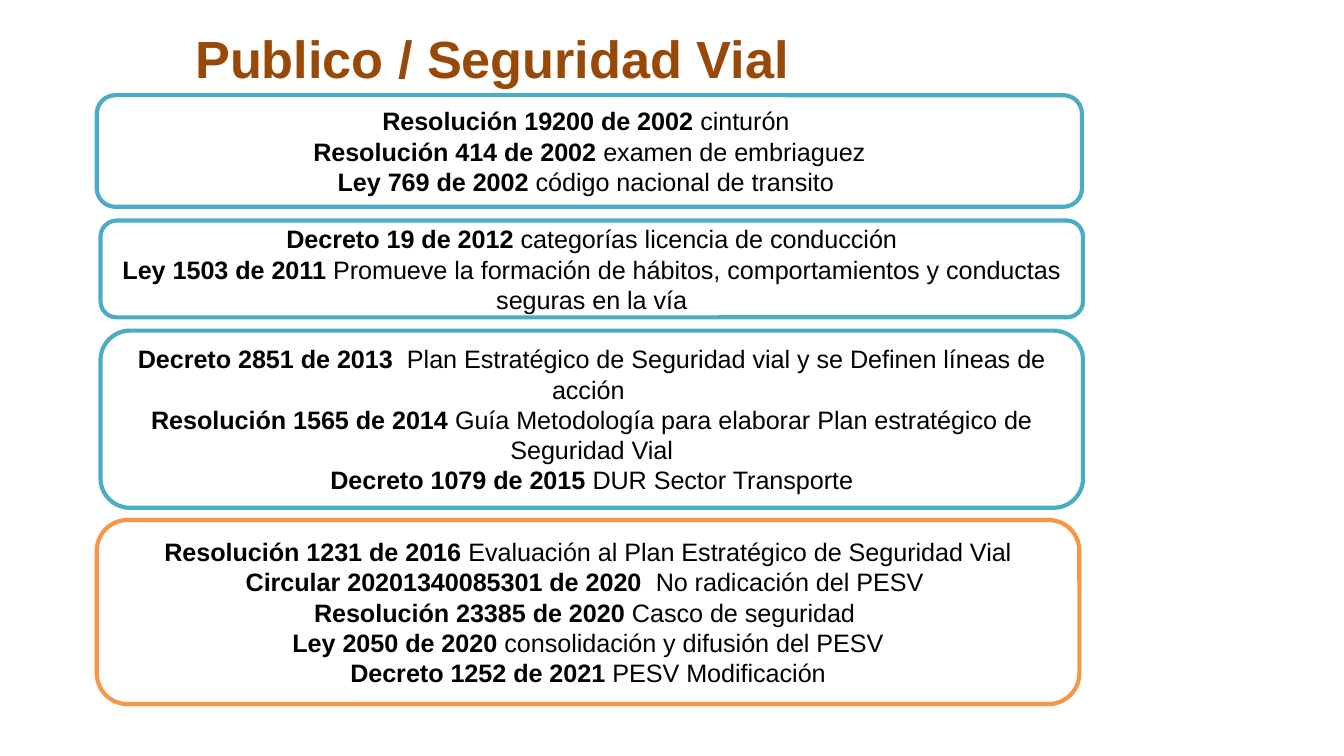
"""Build the slide on public road safety regulations."""
from pptx import Presentation
from pptx.dml.color import RGBColor
from pptx.enum.shapes import MSO_SHAPE as Shape
from pptx.enum.text import MSO_ANCHOR as Anchor, MSO_AUTO_SIZE as AutoSize, PP_ALIGN as Align
from pptx.util import Cm, Pt


def set_color(color_format, value):
    """Apply a hex colour to a fill or font colour."""
    color_format.rgb = RGBColor.from_string(value)


def format_run(run, size, bold, color):
    """Set the look of one run."""
    run.font.name = "Arial"
    run.font.size = Pt(size)
    run.font.bold = bold
    set_color(run.font.color, color)


TEAL, ORANGE = "4BACC6", "F79646"
REGULATION_BOXES = [
    (1.83, 1.8, 18.62, 2.11, TEAL, [
        ("Resolución 19200 de 2002 ", "cinturón "),
        ("Resolución 414 de 2002 ", "examen de embriaguez"),
        ("Ley 769 de 2002 ", "código nacional de transito "),
    ]),
    (1.9, 4.17, 18.57, 1.83, TEAL, [
        ("Decreto 19 de 2012 ", "categorías licencia de conducción"),
        ("Ley 1503 de 2011 ", "Promueve la formación de hábitos, comportamientos "
                              "y conductas seguras en la vía"),
    ]),
    (1.9, 6.25, 18.57, 3.35, TEAL, [
        ("Decreto 2851 de 2013 ", " Plan Estratégico de Seguridad vial y se Definen "
                                  "líneas de acción "),
        ("Resolución 1565 de 2014 ", "Guía Metodología para elaborar Plan estratégico "
                                     "de Seguridad Vial"),
        ("Decreto 1079 de 2015 ", "DUR Sector Transporte"),
    ]),
    (1.83, 9.83, 18.57, 3.48, ORANGE, [
        ("Resolución 1231 de 2016 ", "Evaluación al Plan Estratégico de Seguridad Vial"),
        ("Circular 20201340085301 de 2020  ", "No radicación del PESV "),
        ("Resolución 23385 de 2020 ", "Casco de seguridad "),
        ("Ley 2050 de 2020 ", "consolidación y difusión del PESV"),
        ("Decreto 1252 de 2021 ", "PESV Modificación"),
    ]),
]

presentation = Presentation()
presentation.slide_width, presentation.slide_height = Cm(25.4), Cm(14.29)
slide = presentation.slides.add_slide(presentation.slide_layouts[5])

title = slide.shapes.title
title.left, title.top, title.width, title.height = Cm(1.83), Cm(0.36), Cm(14.94), Cm(1.45)
title.text_frame.text = "Publico / Seguridad Vial"
title.text_frame.vertical_anchor = Anchor.TOP
title.text_frame.auto_size = AutoSize.NONE
title_paragraph = title.text_frame.paragraphs[0]
title_paragraph.alignment = Align.CENTER
format_run(title_paragraph.runs[0], 28, True, "984807")

for left, top, width, height, line_color, regulations in REGULATION_BOXES:
    shape = slide.shapes.add_shape(Shape.ROUNDED_RECTANGLE, Cm(left), Cm(top), Cm(width), Cm(height))
    shape.shadow.inherit = False
    shape.fill.solid()
    set_color(shape.fill.fore_color, "FFFFFF")
    set_color(shape.line.color, line_color)
    shape.line.width = Pt(2.25)
    text_frame = shape.text_frame
    text_frame.word_wrap = True
    text_frame.vertical_anchor = Anchor.MIDDLE
    for index, regulation in enumerate(regulations):
        paragraph = text_frame.add_paragraph() if index else text_frame.paragraphs[0]
        paragraph.alignment = Align.CENTER
        for text, bold in zip(regulation, (True, False)):
            run = paragraph.add_run()
            run.text = text
            format_run(run, 13.5, bold, "000000")

presentation.save("out.pptx")
